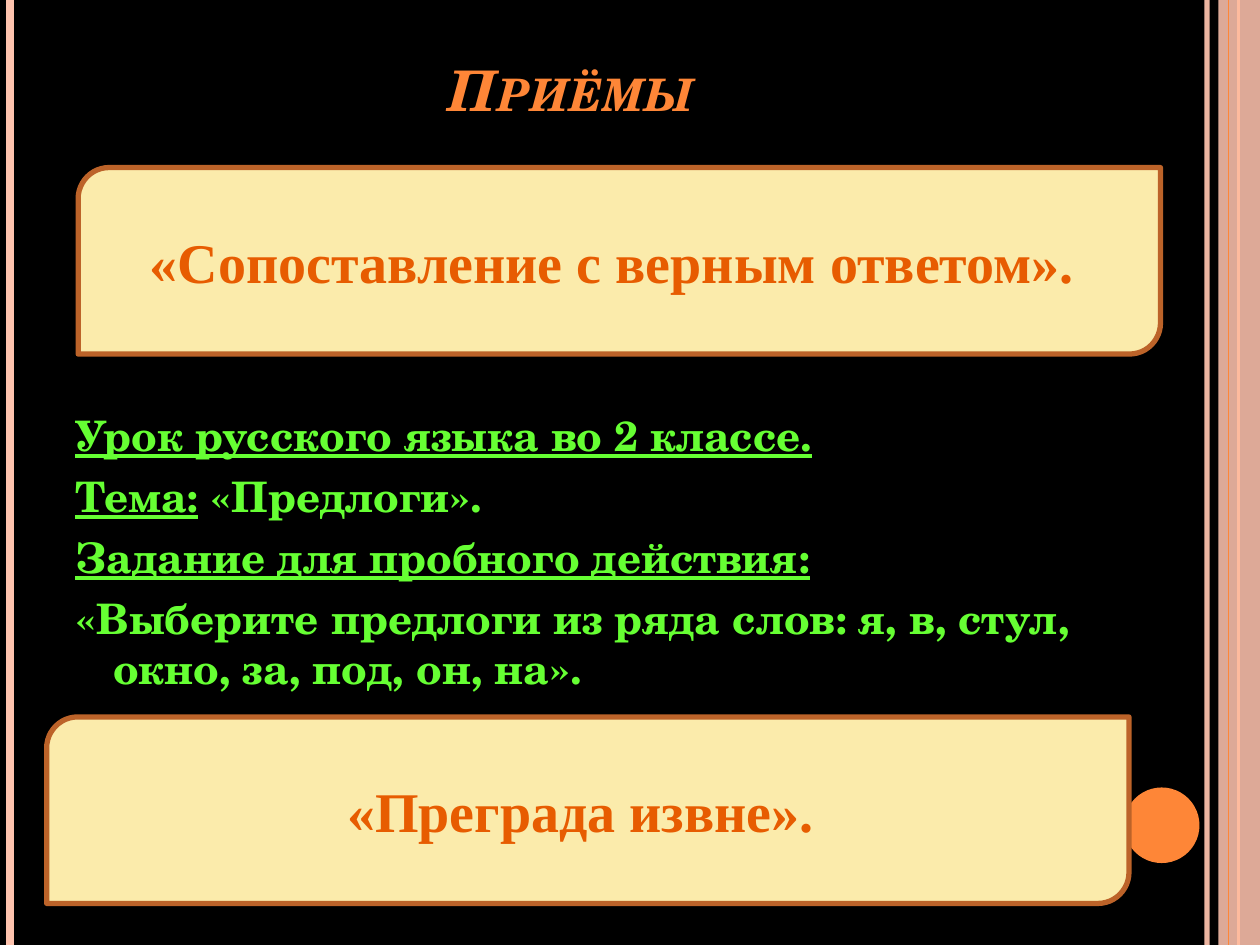
import pptx
import pptx.util
import pptx.dml.color
import pptx.enum.shapes
import pptx.enum.text
import pptx.oxml
import pptx.oxml.ns
from pptx.util import Inches

RGBColor = pptx.dml.color.RGBColor
MSO_SHAPE = pptx.enum.shapes.MSO_SHAPE
ANCHOR = pptx.enum.text.MSO_ANCHOR
ALIGN = pptx.enum.text.PP_ALIGN

BLACK = RGBColor(0x00, 0x00, 0x00)
ORANGE = RGBColor(0xFE, 0x86, 0x37)
PEACH = RGBColor(0xFE, 0xC3, 0xAE)
CREAM = RGBColor(0xFB, 0xEB, 0xAB)
BROWN = RGBColor(0xBC, 0x63, 0x29)
RUST = RGBColor(0xE7, 0x5C, 0x01)
GREEN = RGBColor(0x66, 0xFF, 0x33)
SCHOLA = "TeX Gyre Schola"
TIMES = "Times New Roman"

LESSON = [
    [("Урок русского языка во 2 классе.", True)],
    [("Тема:", True), (" «Предлоги».", False)],
    [("Задание для пробного действия:", True), (" ", False)],
    [("«Выберите предлоги из ряда слов: я, в, стул, окно, за, под, он, на».", False)],
]


def add_text(paragraph, text, size, font, color, italic=False, underline=False, small_caps=False):
    """Append a bold run with the given format to the paragraph."""
    run = paragraph.add_run()
    run.text = text
    run.font.size = pptx.util.Pt(size)
    run.font.name = font
    run.font.color.rgb = color
    run.font.bold = True
    run.font.italic = italic
    run.font.underline = underline
    if small_caps:
        run.font._element.set("cap", "small")


def set_opacity(fill_parent, percent):
    """Make the solid colour below the element partly transparent."""
    color = next(fill_parent.iter(pptx.oxml.ns.qn("a:srgbClr")))
    alpha = pptx.oxml.parse_xml(f'<a:alpha {pptx.oxml.ns.nsdecls("a")} val="{percent * 1000}"/>')
    color.append(alpha)


def add_stripe(slide, x, top, height, color, width, opacity=100):
    """Draw a vertical line."""
    stripe = slide.shapes.add_connector(
        pptx.enum.shapes.MSO_CONNECTOR.STRAIGHT, x, top, x, top + height)
    stripe.line.color.rgb = color
    stripe.line.width = pptx.util.Pt(width)
    properties = stripe._element.spPr
    if opacity < 100:
        set_opacity(properties, opacity)
    properties.append(pptx.oxml.parse_xml(f'<a:effectLst {pptx.oxml.ns.nsdecls("a")}/>'))


def add_filled(slide, preset, left, top, width, height, color):
    """Add a flat preset shape without outline."""
    shape = slide.shapes.add_shape(preset, left, top, width, height)
    shape.shadow.inherit = False
    shape.fill.solid()
    shape.fill.fore_color.rgb = color
    shape.line.fill.background()
    return shape


def add_frame(slide, left, top, width, height):
    """Draw the edge stripes, the right band and the corner circle."""
    right = left + width
    add_stripe(slide, right - Inches(0.42), top, height, PEACH, 3, opacity=93)
    add_stripe(slide, left + Inches(0.08), top, height, PEACH, 4.5)
    add_stripe(slide, right - Inches(0.17), top, height, ORANGE, 1.5)
    band = add_filled(slide, MSO_SHAPE.RECTANGLE, right - Inches(0.33), top,
                      Inches(0.33), height, PEACH)
    set_opacity(band._element.spPr, 87)
    add_stripe(slide, right - Inches(0.25), top, height, ORANGE, 0.75)
    add_filled(slide, MSO_SHAPE.OVAL, right - Inches(1.08), top + height - Inches(1.25),
               Inches(0.6), Inches(0.6), ORANGE)


def add_title(slide, left, top, width, height):
    """Place the slide title."""
    frame = slide.shapes.add_textbox(left, top, width, height).text_frame
    frame.word_wrap = True
    frame.vertical_anchor = ANCHOR.BOTTOM
    heading = frame.paragraphs[0]
    heading.alignment = ALIGN.CENTER
    add_text(heading, "Приёмы ", 32, SCHOLA, ORANGE, italic=True, small_caps=True)


def add_lesson(slide, left, top, width, height):
    """Place the lesson description with hanging indents."""
    frame = slide.shapes.add_textbox(left, top, width, height).text_frame
    frame.word_wrap = True
    for index, parts in enumerate(LESSON):
        paragraph = frame.add_paragraph() if index else frame.paragraphs[0]
        paragraph.space_before = pptx.util.Pt(6)
        indents = paragraph._p.get_or_add_pPr()
        indents.set("marL", str(Inches(0.3)))
        indents.set("indent", str(-Inches(0.3)))
        for text, underline in parts:
            add_text(paragraph, text, 24, SCHOLA, GREEN, underline=underline)


def add_technique(slide, left, top, width, height, name):
    """Place a cream panel with the name of a technique."""
    panel = add_filled(slide, MSO_SHAPE.ROUND_2_DIAG_RECTANGLE, left, top, width, height, CREAM)
    panel.line.color.rgb = BROWN
    panel.line.width = pptx.util.Pt(3)
    frame = panel.text_frame
    frame.word_wrap = True
    frame.vertical_anchor = ANCHOR.MIDDLE
    label = frame.paragraphs[0]
    label.alignment = ALIGN.CENTER
    add_text(label, name, 32, TIMES, RUST)


def main():
    """Build and save the slide."""
    deck = pptx.Presentation()
    deck.slide_width, deck.slide_height = Inches(10), Inches(7.5)
    slide = deck.slides.add_slide(deck.slide_layouts[6])
    slide.background.fill.solid()
    slide.background.fill.fore_color.rgb = BLACK
    add_frame(slide, 0, 0, deck.slide_width, deck.slide_height)
    add_title(slide, Inches(0.5), Inches(0.3), Inches(8.17), Inches(0.72))
    add_lesson(slide, Inches(0.5), Inches(3.2), Inches(8.95), Inches(3.52))
    for left, top, name in ((0.62, 1.33, "«Сопоставление с верным ответом». "),
                            (0.37, 5.69, "«Преграда извне». ")):
        add_technique(slide, Inches(left), Inches(top), Inches(8.59), Inches(1.48), name)
    deck.save("out.pptx")


if __name__ == "__main__":
    main()
